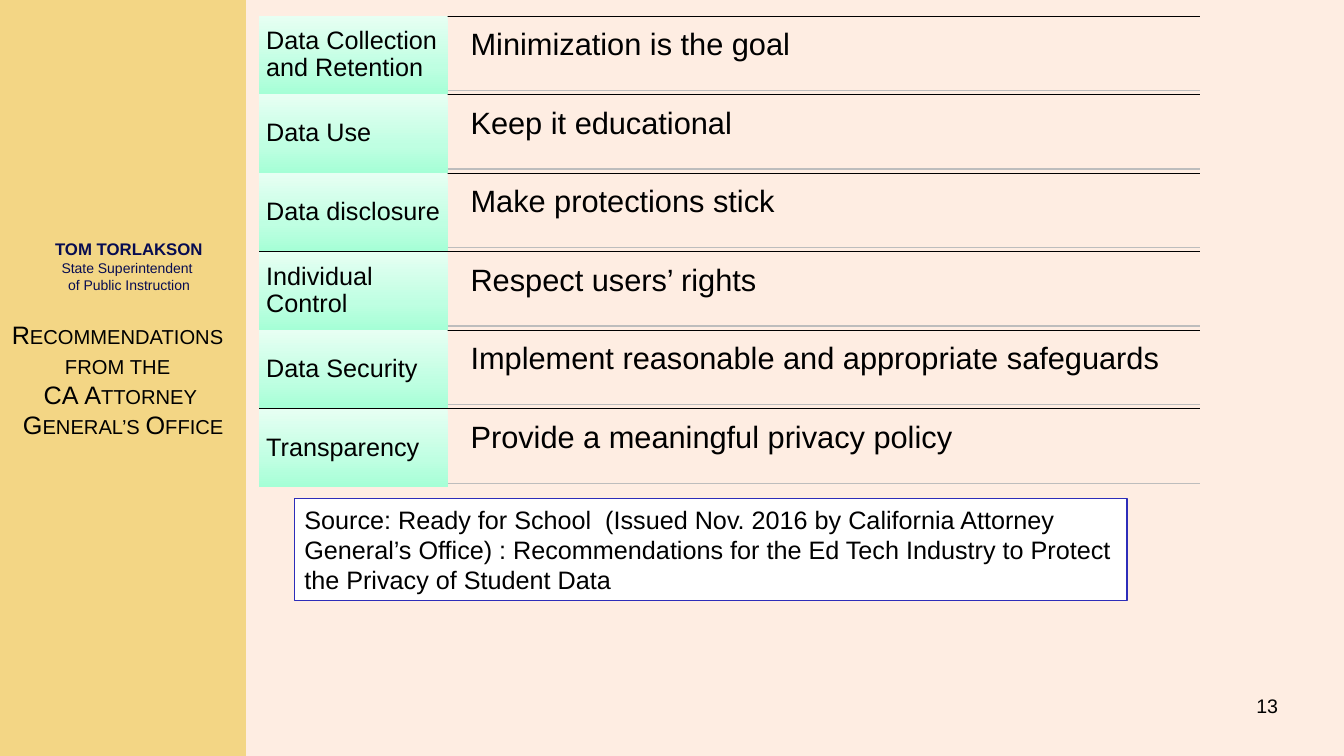
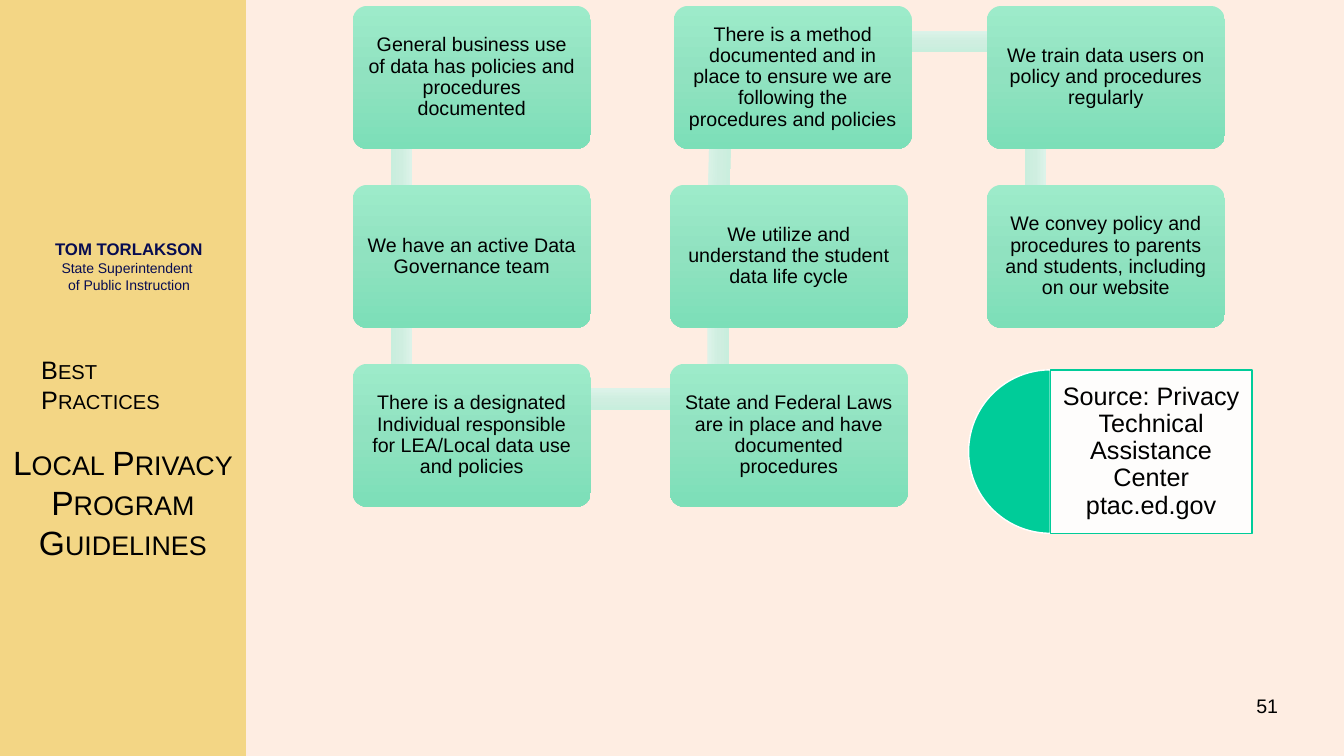
import math
from dataclasses import dataclass

from lxml import etree
from pptx import Presentation
from pptx.dml.color import RGBColor
from pptx.enum import shapes, text
from pptx.oxml.ns import qn
from pptx.util import Cm, Pt

MIDDLE, TOP = text.MSO_ANCHOR.MIDDLE, text.MSO_ANCHOR.TOP
LEFT, CENTER, RIGHT = text.PP_ALIGN.LEFT, text.PP_ALIGN.CENTER, text.PP_ALIGN.RIGHT
RECTANGLE = shapes.MSO_SHAPE.RECTANGLE


@dataclass(frozen=True)
class Theme:
    font: str = "Arial"
    ink: str = "000000"
    navy: str = "070C51"
    white: str = "FFFFFF"
    background: str = "FEEDE2"
    band: str = "F3D685"
    frame: str = "2D2DB9"
    rule: str = "BDBDBD"
    green: str = "00CC99"
    # Gradients run from top to bottom: (percent, colour)
    label: tuple = ((0, "E7FFF3"), (65, "BFFFE2"), (100, "A5FFD6"))
    step: tuple = ((0, "9DEBCA"), (50, "90E2C0"), (100, "7CDFB8"))
    link: tuple = ((0, "DCF3E9"), (50, "CFEEE0"), (100, "C8EEDD"))
    tiny: int = 10
    name: int = 12
    small: int = 14
    body: int = 18
    large: int = 22
    title: int = 24


THEME = Theme()

# Content
SUPERINTENDENT = "TOM TORLAKSON"
OFFICE = "State Superintendent \vof Public Instruction"

OFFICE_TITLE = "Recommendations \vfrom the \vCA Attorney\v General’s Office"
RECOMMENDATIONS = [
    ("Data Collection and Retention", "Minimization is the goal"),
    ("Data Use", "Keep it educational"),
    ("Data disclosure", "Make protections stick"),
    ("Individual Control", "Respect users’ rights"),
    ("Data Security", "Implement reasonable and appropriate safeguards"),
    ("Transparency", "Provide a meaningful privacy policy"),
]
REPORT_SOURCE = (
    "Source: Ready for School  (Issued Nov. 2016 by California Attorney General’s "
    "Office) : Recommendations for the Ed Tech Industry to Protect the Privacy of "
    "Student Data"
)

PRACTICES_HEADING = "Best Practices"
PROGRAM_TITLE = "Local Privacy Program Guidelines"
STEPS = [
    "General business use of data has policies and procedures documented",
    "We have an active Data Governance team",
    "There is a designated Individual responsible for LEA/Local data use and policies",
    "State and Federal Laws are in place and have documented procedures",
    "We utilize and understand the student data life cycle",
    "There is a method documented and in place to ensure we are following the "
    "procedures and policies",
    "We train data users on policy and procedures regularly",
    "We convey policy and procedures to parents and students, including on our website",
]
CENTER_SOURCE = "Source: Privacy Technical Assistance Center ptac.ed.gov"


# Drawing helpers; boxes are (left, top, width, height) in centimetres
def style_paragraph(paragraph, size, color=THEME.ink, bold=False, align=LEFT, spacing=None):
    paragraph.alignment = align
    if spacing:
        paragraph.line_spacing = spacing
    font = paragraph.font
    font.name, font.size, font.bold = THEME.font, Pt(size), bold
    font.color.rgb = RGBColor.from_string(color)


def write(shape, words, size, align=LEFT, anchor=TOP, inset=(0.25, 0.13),
          spacing=None, small_caps=False):
    frame = shape.text_frame
    frame.word_wrap = True
    frame.vertical_anchor = anchor
    frame.margin_left = frame.margin_right = Cm(inset[0])
    frame.margin_top = frame.margin_bottom = Cm(inset[1])
    frame.text = words
    paragraph = frame.paragraphs[0]
    style_paragraph(paragraph, size, align=align, spacing=spacing)
    if small_caps:
        for run in paragraph.runs:
            run._r.get_or_add_rPr().set("cap", "small")


def add_text(slide, box, words, size, **options):
    shape = slide.shapes.add_textbox(*map(Cm, box))
    write(shape, words, size, **options)
    return shape


def add_block(slide, box, fill, line=None, kind=RECTANGLE):
    shape = slide.shapes.add_shape(kind, *map(Cm, box))
    shape.shadow.inherit = False
    if isinstance(fill, str):
        shape.fill.solid()
        shape.fill.fore_color.rgb = RGBColor.from_string(fill)
    else:
        shape.fill.gradient()
        shape.fill.gradient_angle = 270
        stops = shape._element.spPr.find(".//" + qn("a:gsLst"))
        for stop in list(stops):
            stops.remove(stop)
        for percent, color in fill:
            stop = etree.SubElement(stops, qn("a:gs"), pos=str(percent * 1000))
            etree.SubElement(stop, qn("a:srgbClr"), val=color)
    if line:
        shape.line.color.rgb = RGBColor.from_string(line)
        shape.line.width = Pt(1)
    else:
        shape.line.fill.background()
    return shape


def add_rule(slide, left, right, top, color, width):
    rule = slide.shapes.add_connector(
        shapes.MSO_CONNECTOR.STRAIGHT, Cm(left), Cm(top), Cm(right), Cm(top))
    rule.line.color.rgb = RGBColor.from_string(color)
    rule.line.width = Pt(width)
    etree.SubElement(rule._element.spPr, qn("a:effectLst"))


def add_base_slide(presentation, number, title, title_box, title_size):
    slide = presentation.slides.add_slide(presentation.slide_layouts[6])
    slide.background.fill.solid()
    slide.background.fill.fore_color.rgb = RGBColor.from_string(THEME.background)
    add_block(slide, (0, 0, 6.2, 19.05), THEME.band)
    signature = add_text(slide, (0.89, 5.74, 4.72, 1.93), SUPERINTENDENT, THEME.name,
                         anchor=MIDDLE)
    style_paragraph(signature.text_frame.paragraphs[0], THEME.name, THEME.navy, True, CENTER)
    office = signature.text_frame.add_paragraph()
    office.text = OFFICE
    style_paragraph(office, THEME.tiny, THEME.navy, align=CENTER)
    add_text(slide, title_box, title, title_size, align=CENTER, anchor=MIDDLE,
             inset=(0, 0), small_caps=True)
    add_text(slide, (26.26, 17.35, 6.2, 1.27), str(number), THEME.small, align=RIGHT)
    return slide


# Slide with the recommendation list
def build_recommendations(presentation):
    slide = add_base_slide(presentation, 13, OFFICE_TITLE, (0, 8.36, 6.07, 2.41), THEME.body)
    left, label_width, right = 6.53, 4.75, 30.25
    first_top, row_height = 0.4, 1.98
    detail_left = left + label_width
    for index, (label, detail) in enumerate(RECOMMENDATIONS):
        top = first_top + index * row_height
        add_rule(slide, left, right, top, THEME.ink, 0.5)
        block = add_block(slide, (left, top, label_width, row_height), THEME.label)
        write(block, label, THEME.body, anchor=MIDDLE, inset=(0.18, 0.18), spacing=0.9)
        add_text(slide, (detail_left + 0.35, top + 0.1, right - detail_left - 0.35, 1.8),
                 detail, THEME.large, inset=(0.23, 0.23), spacing=0.9)
        add_rule(slide, detail_left, right, top + 1.88, THEME.rule, 1)
    source = add_block(slide, (7.42, 12.57, 20.98, 2.57), THEME.white, THEME.frame)
    write(source, REPORT_SOURCE, THEME.body)


# Slide with the winding chain of practices
def step_position(index):
    column, row = divmod(index, 3)
    if column % 2:
        row = 2 - row
    nudge = 0.1 if index == 5 else 0
    return 8.89 + column * 7.99 + nudge, 0.15 + row * 4.51


def build_practices(presentation):
    slide = add_base_slide(presentation, 51, PROGRAM_TITLE, (0, 11.1, 6.2, 3.1), THEME.title)
    positions = [step_position(index) for index in range(len(STEPS))]
    thickness = 0.54
    for (x1, y1), (x2, y2) in zip(positions, positions[1:]):
        length = math.hypot(x2 - x1, y2 - y1)
        center_x, center_y = (x1 + x2) / 2 + 1.22, (y1 + y2) / 2 + 0.89
        link = add_block(slide, (center_x - length / 2, center_y - thickness / 2,
                                 length, thickness), THEME.link)
        link.rotation = math.degrees(math.atan2(y2 - y1, x2 - x1)) % 360
    for (left, top), words in zip(positions, STEPS):
        step = add_block(slide, (left, top, 6, 3.6), THEME.step,
                         kind=shapes.MSO_SHAPE.ROUNDED_RECTANGLE)
        step.adjustments[0] = 0.1
        write(step, words, THEME.small, align=CENTER, anchor=MIDDLE,
              inset=(0.25, 0.25), spacing=0.9)

    # Half disc and source note
    size, disc_left, disc_top = 4.12, 24.41, 9.32
    disc = add_block(slide, (disc_left, disc_top, size, size), THEME.green, THEME.white,
                     shapes.MSO_SHAPE.PIE)
    disc.adjustments[0], disc.adjustments[1] = 54, 162
    note = add_block(slide, (disc_left + size / 2, disc_top, 5.08, size),
                     THEME.white, THEME.green)
    fill_color = note._element.spPr.find(qn("a:solidFill")).find(qn("a:srgbClr"))
    etree.SubElement(fill_color, qn("a:alpha"), val="90000")
    write(note, CENTER_SOURCE, THEME.body, align=CENTER, anchor=MIDDLE,
          inset=(0.18, 0.18), spacing=0.9)
    add_text(slide, (0.79, 8.79, 4.6, 1.8), PRACTICES_HEADING, THEME.body, small_caps=True)


def main():
    presentation = Presentation()
    presentation.slide_width, presentation.slide_height = Cm(33.87), Cm(19.05)
    build_recommendations(presentation)
    build_practices(presentation)
    presentation.save("out.pptx")


if __name__ == "__main__":
    main()
